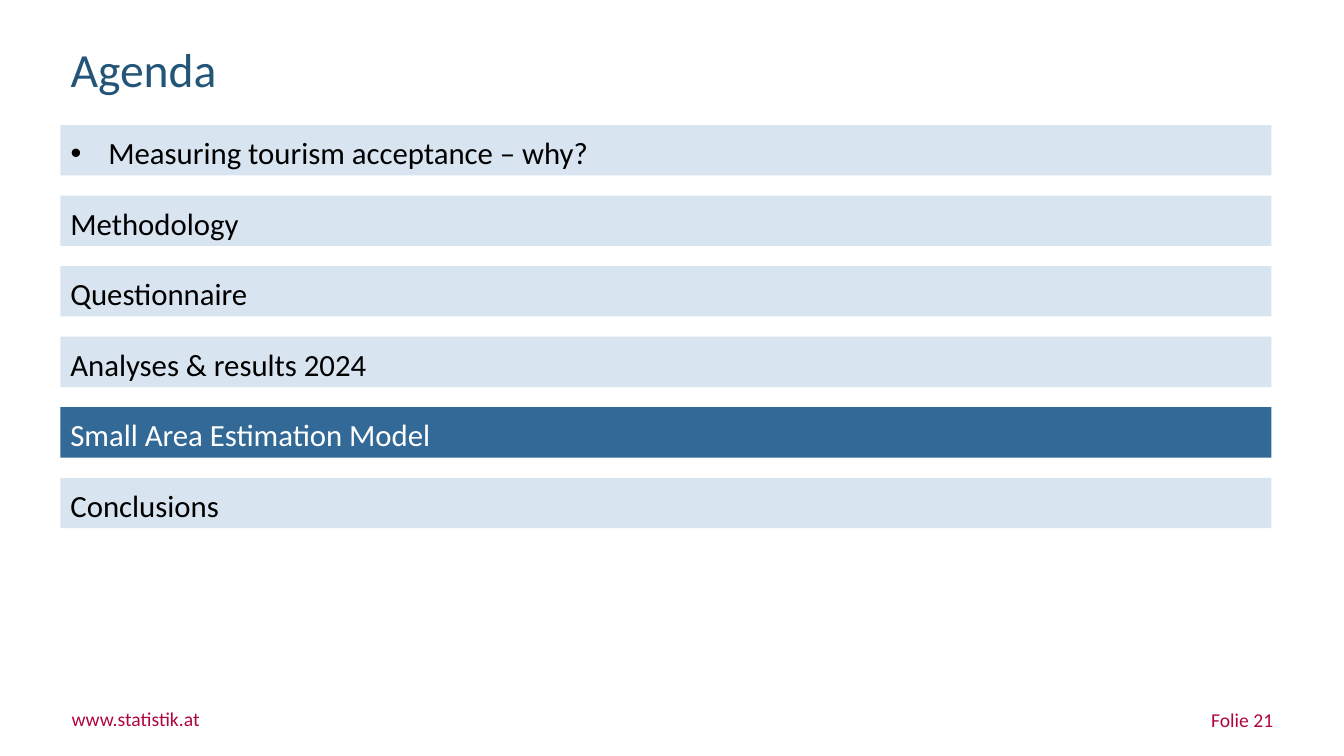
from lxml import etree
from pptx import Presentation
from pptx.dml.color import RGBColor
from pptx.enum.shapes import MSO_SHAPE
from pptx.enum.text import MSO_ANCHOR, MSO_AUTO_SIZE, PP_ALIGN
from pptx.oxml.ns import qn
from pptx.util import Inches, Pt

RECTANGLE = MSO_SHAPE.RECTANGLE
TOP, MIDDLE = MSO_ANCHOR.TOP, MSO_ANCHOR.MIDDLE
NO_AUTOFIT = MSO_AUTO_SIZE.NONE
LEFT, RIGHT = PP_ALIGN.LEFT, PP_ALIGN.RIGHT

COLORS = {
    "title": "235578",
    "bar": "D8E5F1",
    "current_bar": "326996",
    "text": "000000",
    "current_text": "FFFFFF",
    "footer": "B0063D",
}
TOPICS = [
    "Measuring tourism acceptance – why?",
    "Methodology",
    "Questionnaire",
    "Analyses & results 2024",
    "Small Area Estimation Model",
    "Conclusions",
]
CURRENT_TOPIC = "Small Area Estimation Model"
BAR_LEFT, BAR_TOP, BAR_WIDTH, BAR_HEIGHT, BAR_PITCH = 0.6, 1.24, 12.01, 0.5, 0.7


def place(shape, left, top, width, height):
    shape.left, shape.top = Inches(left), Inches(top)
    shape.width, shape.height = Inches(width), Inches(height)


def write(shape, text, size, color, anchor=TOP, align=LEFT, line_spacing=1.0):
    """Fill a shape with one formatted paragraph."""
    frame = shape.text_frame
    frame.text = text
    frame.auto_size = NO_AUTOFIT
    frame.vertical_anchor = anchor
    paragraph = frame.paragraphs[0]
    paragraph.alignment = align
    paragraph.line_spacing = line_spacing
    paragraph.space_before = Pt(0)
    font = paragraph.font
    font.name, font.size = "Calibri", Pt(size)
    font.color.rgb = RGBColor.from_string(COLORS[color])


prs = Presentation()
prs.slide_width, prs.slide_height = Inches(13.33), Inches(7.5)
slide = prs.slides.add_slide(prs.slide_layouts[1])

title = slide.shapes.title
place(title, 0.6, 0.41, 12.01, 0.62)
write(title, "Agenda", 34, "title", line_spacing=0.9)

# Agenda bars: the first is the body placeholder
for row, topic in enumerate(TOPICS):
    position = BAR_LEFT, BAR_TOP + row * BAR_PITCH, BAR_WIDTH, BAR_HEIGHT
    if row == 0:
        bar = slide.placeholders[1]
        place(bar, *position)
        properties = bar.text_frame.paragraphs[0]._p.get_or_add_pPr()
        properties.set("marL", "0")
        properties.set("indent", "0")
        etree.SubElement(properties, qn("a:buNone"))
    else:
        bar = slide.shapes.add_shape(RECTANGLE, *map(Inches, position))
        bar.shadow.inherit = False
        bar.line.fill.background()
    prefix = "current_" if topic == CURRENT_TOPIC else ""
    bar.fill.solid()
    bar.fill.fore_color.rgb = RGBColor.from_string(COLORS[prefix + "bar"])
    write(bar, topic, 22, prefix + "text", anchor=MIDDLE, line_spacing=1.12)

# Footer
for text, left, top, width, align in [
    ("www.statistik.at", 0.71, 7.01, 1.29, LEFT),
    ("Folie 21", 9.63, 7.02, 3, RIGHT),
]:
    footer = slide.shapes.add_textbox(*map(Inches, (left, top, width, 0.24)))
    frame = footer.text_frame
    frame.margin_left = frame.margin_right = frame.margin_top = frame.margin_bottom = 0
    frame.word_wrap = align == RIGHT
    write(footer, text, 14, "footer", align=align)

prs.save("out.pptx")
